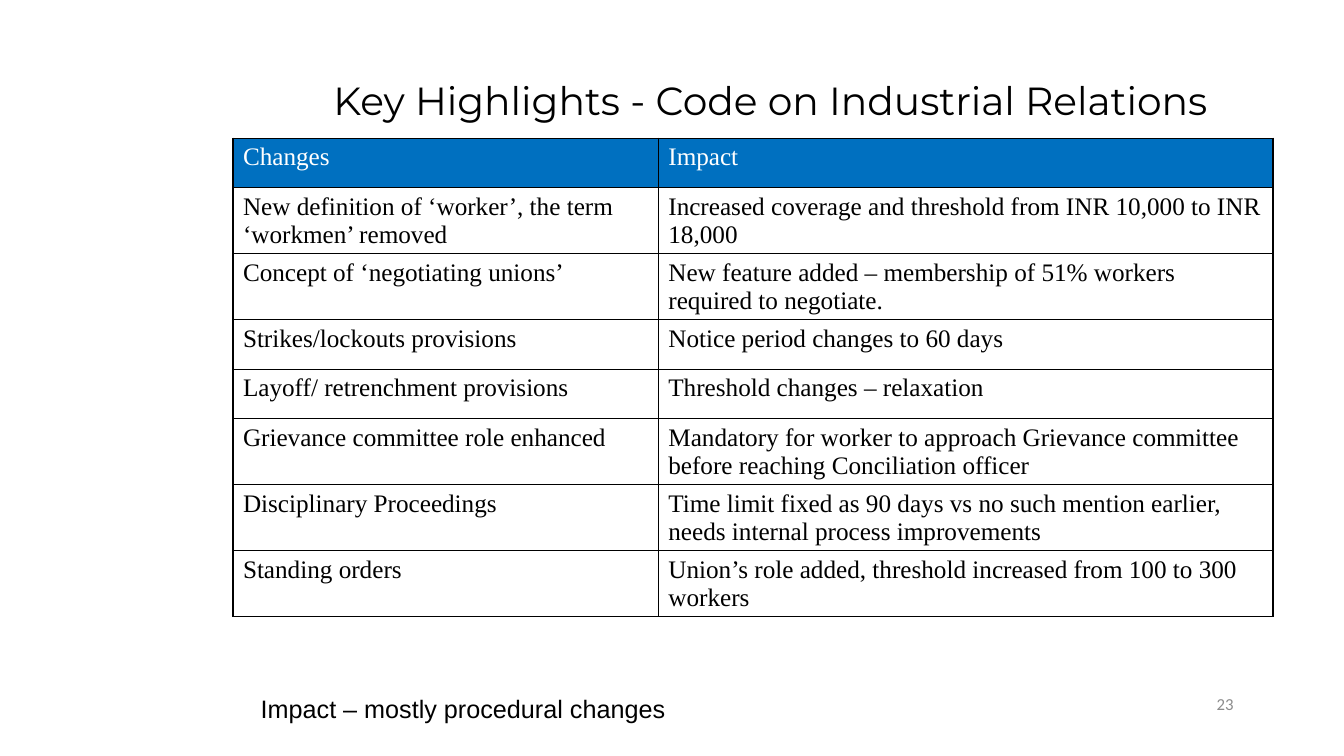
from pptx import Presentation
from pptx.dml.color import RGBColor
from pptx.enum.text import MSO_ANCHOR, PP_ALIGN
from pptx.oxml.ns import qn
from pptx.util import Cm, Pt
from lxml.etree import SubElement

TITLE = "Key Highlights - Code on Industrial Relations"
NOTE = "Impact – mostly procedural changes"
PAGE = "23"
ROWS = [
    ("Changes", "Impact"),
    ("New definition of ‘worker’, the term ‘workmen’ removed",
     "Increased coverage and threshold from INR 10,000 to INR 18,000"),
    ("Concept of ‘negotiating unions’",
     "New feature added – membership of 51% workers required to negotiate."),
    ("Strikes/lockouts provisions", "Notice period changes to 60 days"),
    ("Layoff/ retrenchment provisions", "Threshold changes – relaxation"),
    ("Grievance committee role enhanced",
     "Mandatory for worker to approach Grievance committee before reaching "
     "Conciliation officer"),
    ("Disciplinary Proceedings",
     "Time limit fixed as 90 days vs no such mention earlier, needs internal "
     "process improvements"),
    ("Standing orders",
     "Union’s role added, threshold increased from 100 to 300 workers"),
]
WIDTHS = (10.72, 15.49)
ROW_H = 1.25

# Each type style is font, size, colour
THEME = {
    "title": ("Montserrat", 28, "000000"),
    "head": ("Times New Roman", 18, "FFFFFF"),
    "body": ("Times New Roman", 18, "000000"),
    "note": ("Arial", 18, "000000"),
    "page": ("Calibri", 12, "8C8C8C"),
    "band": "0070C0",
    "rule": "000000",
}


def write(frame, text, style, align=PP_ALIGN.LEFT):
    frame.text = text
    para = frame.paragraphs[0]
    para.alignment = align
    font = para.runs[0].font
    name, size, color = THEME[style]
    font.name, font.size = name, Pt(size)
    font.color.rgb = RGBColor.from_string(color)


def add_text(slide, box, text, style, align=PP_ALIGN.LEFT,
             anchor=MSO_ANCHOR.TOP):
    frame = slide.shapes.add_textbox(*map(Cm, box)).text_frame
    frame.word_wrap = True
    frame.vertical_anchor = anchor
    write(frame, text, style, align)


def add_rules(cell):
    """Draw a thin line on all four sides; the lines must precede the fill."""
    props = cell._tc.get_or_add_tcPr()
    for side in ("a:lnL", "a:lnR", "a:lnT", "a:lnB"):
        line = SubElement(props, qn(side), w=str(Pt(1)))
        fill = SubElement(line, qn("a:solidFill"))
        SubElement(fill, qn("a:srgbClr"), val=THEME["rule"])


def add_grid(slide, left, top):
    table = slide.shapes.add_table(
        len(ROWS), len(WIDTHS), Cm(left), Cm(top),
        Cm(sum(WIDTHS)), Cm(ROW_H * len(ROWS))).table
    for col, width in zip(table.columns, WIDTHS):
        col.width = Cm(width)
    for r, row in enumerate(ROWS):
        table.rows[r].height = Cm(ROW_H)
        for c, text in enumerate(row):
            cell = table.cell(r, c)
            add_rules(cell)
            if r == 0:
                cell.fill.solid()
                cell.fill.fore_color.rgb = RGBColor.from_string(THEME["band"])
            else:
                cell.fill.background()
            write(cell.text_frame, text, "body" if r else "head")


def main():
    deck = Presentation()
    deck.slide_width, deck.slide_height = Cm(33.87), Cm(19.05)
    slide = deck.slides.add_slide(deck.slide_layouts[6])
    add_grid(slide, 5.87, 3.48)
    add_text(slide, (5.33, 1.92, 28.17, 1.2), TITLE, "title",
             PP_ALIGN.CENTER, MSO_ANCHOR.MIDDLE)
    add_text(slide, (24.28, 17.35, 7.06, 1.27), PAGE, "page", PP_ALIGN.RIGHT)
    add_text(slide, (6.32, 17.35, 25.3, 1.02), NOTE, "note")
    deck.save("out.pptx")


if __name__ == "__main__":
    main()
